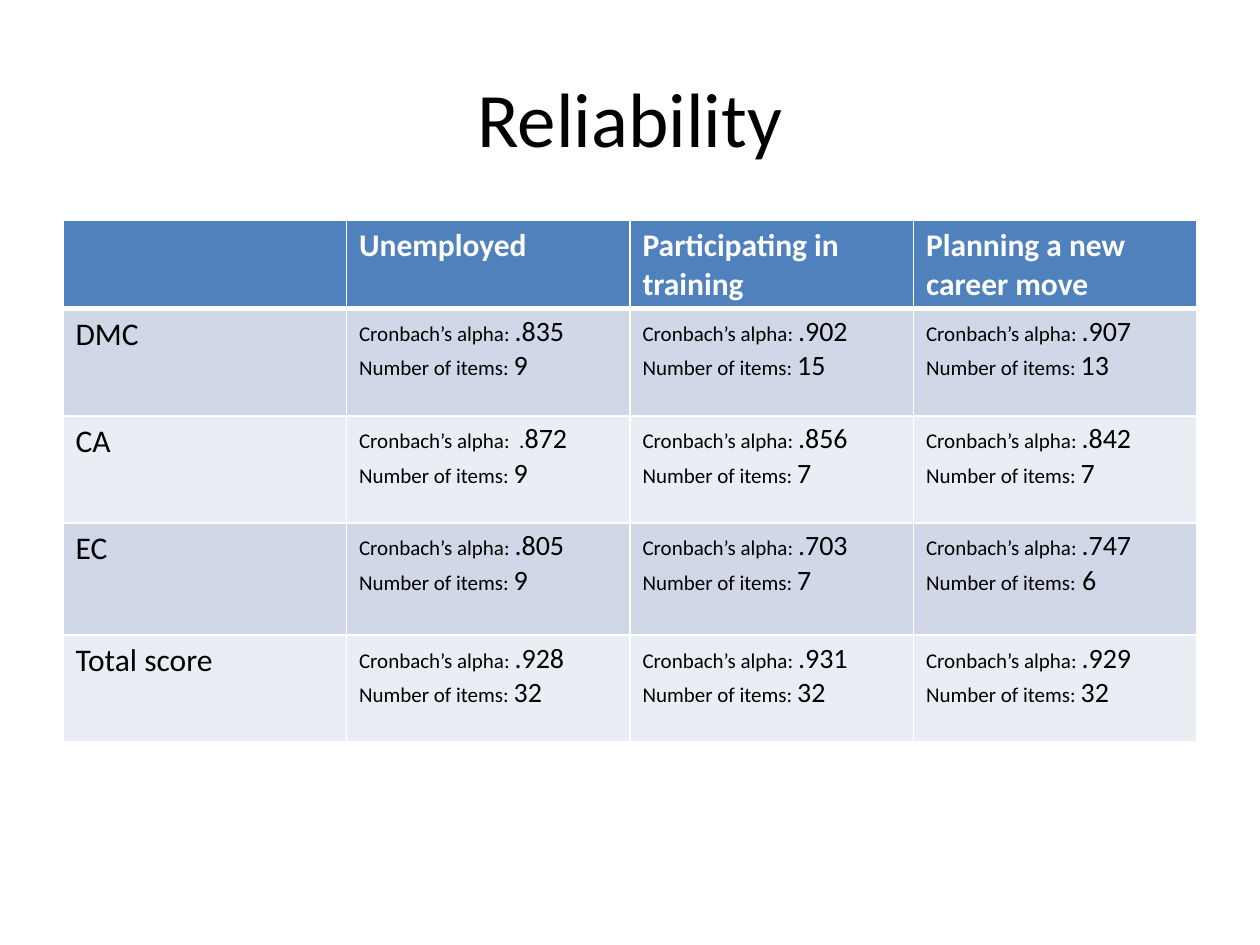
import pptx
import pptx.dml.color
import pptx.enum.text
import pptx.oxml
import pptx.oxml.ns
import pptx.util

Inches = pptx.util.Inches

# Content
TITLE = "Reliability"
HEADERS = ["", "Unemployed", "Participating in training", "Planning a new career move"]
ALPHA, ITEMS = "Cronbach’s alpha: ", "Number of items: "
# Each row: scale, then (alpha, number of items) for each group
SCALES = [
    ("DMC", (".835", "9"), (".902", "15"), (".907", "13")),
    ("CA", (".872", "9"), (".856", "7"), (".842", "7")),
    ("EC", (".805", "9"), (".703", "7"), (".747", "6")),
    ("Total score", (".928", "32"), (".931", "32"), (".929", "32")),
]
# Cells whose size change falls at another point: (scale, column) -> lines
SPLITS = {
    ("CA", 1): [[("Cronbach’s alpha:  .", 12), ("872", 16)], [(ITEMS, 12), ("9", 16)]],
    ("EC", 3): [[(ALPHA, 12), (".747", 16)], [("Number of items:", 12), (" 6", 16)]],
}

# Style
FONT = "Calibri"
BLACK, WHITE = "000000", "FFFFFF"
HEADER_FILL, BANDS = "4F81BD", ("D0D8E8", "E9EDF4")
COLUMN_WIDTH = 2.25
ROW_HEIGHTS = [0.7, 0.85, 0.85, 0.89, 0.85]


def rgb(value):
    return pptx.dml.color.RGBColor.from_string(value)


def write(frame, lines, color=BLACK, bold=False, align=None):
    """Fill a text frame; each line is a list of (text, size) spans."""
    for index, line in enumerate(lines):
        para = frame.add_paragraph() if index else frame.paragraphs[0]
        para.alignment = align
        for text, size in line:
            span = para.add_run()
            span.text = text
            span.font.name = FONT
            span.font.size = pptx.util.Pt(size)
            span.font.bold = bold
            span.font.color.rgb = rgb(color)


def style_cell(cell, fill, top=1, bottom=1):
    properties = cell._tc.get_or_add_tcPr()
    for side, width in (("L", 1), ("R", 1), ("T", top), ("B", bottom)):
        properties.append(pptx.oxml.parse_xml(
            f'<a:ln{side} {pptx.oxml.ns.nsdecls("a")} w="{pptx.util.Pt(width)}">'
            f'<a:solidFill><a:srgbClr val="{WHITE}"/></a:solidFill></a:ln{side}>'))
    cell.fill.solid()
    cell.fill.fore_color.rgb = rgb(fill)


deck = pptx.Presentation()
deck.slide_width, deck.slide_height = Inches(10), Inches(7.5)
page = deck.slides.add_slide(deck.slide_layouts[6])

# Title
box = page.shapes.add_textbox(Inches(0.5), Inches(0.3), Inches(9), Inches(1.25))
box.text_frame.word_wrap = True
box.text_frame.vertical_anchor = pptx.enum.text.MSO_ANCHOR.MIDDLE
write(box.text_frame, [[(TITLE, 44)]], align=pptx.enum.text.PP_ALIGN.CENTER)

# Table grid
table = page.shapes.add_table(
    len(ROW_HEIGHTS), len(HEADERS), Inches(0.5), Inches(1.75),
    Inches(COLUMN_WIDTH * len(HEADERS)), Inches(sum(ROW_HEIGHTS))).table
for column in table.columns:
    column.width = Inches(COLUMN_WIDTH)
for row, height in zip(table.rows, ROW_HEIGHTS):
    row.height = Inches(height)

# Header row
for index, header in enumerate(HEADERS):
    cell = table.cell(0, index)
    style_cell(cell, HEADER_FILL, bottom=3)
    if header:
        write(cell.text_frame, [[(header, 18)]], color=WHITE, bold=True)

# Scale rows
for row_index, (scale, *groups) in enumerate(SCALES, start=1):
    contents = [[[(scale, 18)]]]
    for column_index, (alpha, items) in enumerate(groups, start=1):
        lines = [[(ALPHA, 12), (alpha, 16)], [(ITEMS, 12), (items, 16)]]
        contents.append(SPLITS.get((scale, column_index), lines))
    for column_index, lines in enumerate(contents):
        cell = table.cell(row_index, column_index)
        style_cell(cell, BANDS[(row_index - 1) % 2], top=3 if row_index == 1 else 1)
        write(cell.text_frame, lines)

deck.save("out.pptx")
